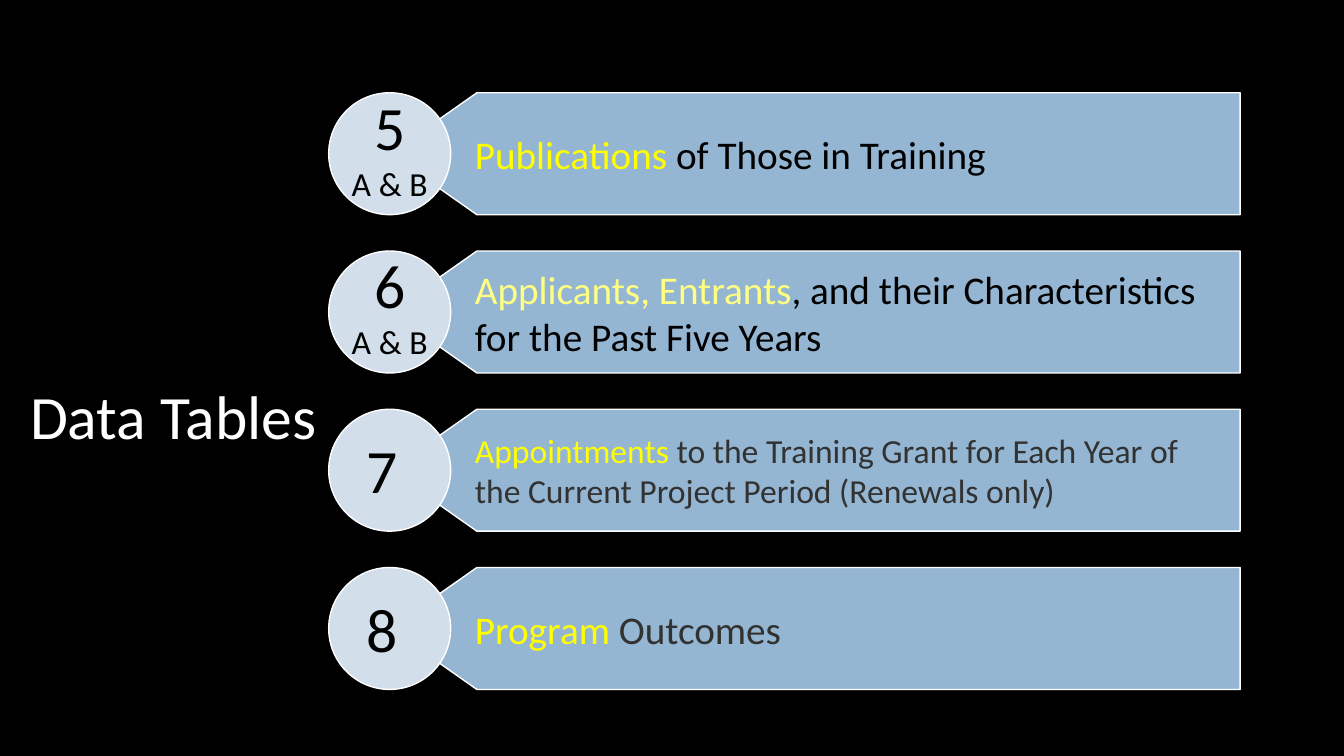
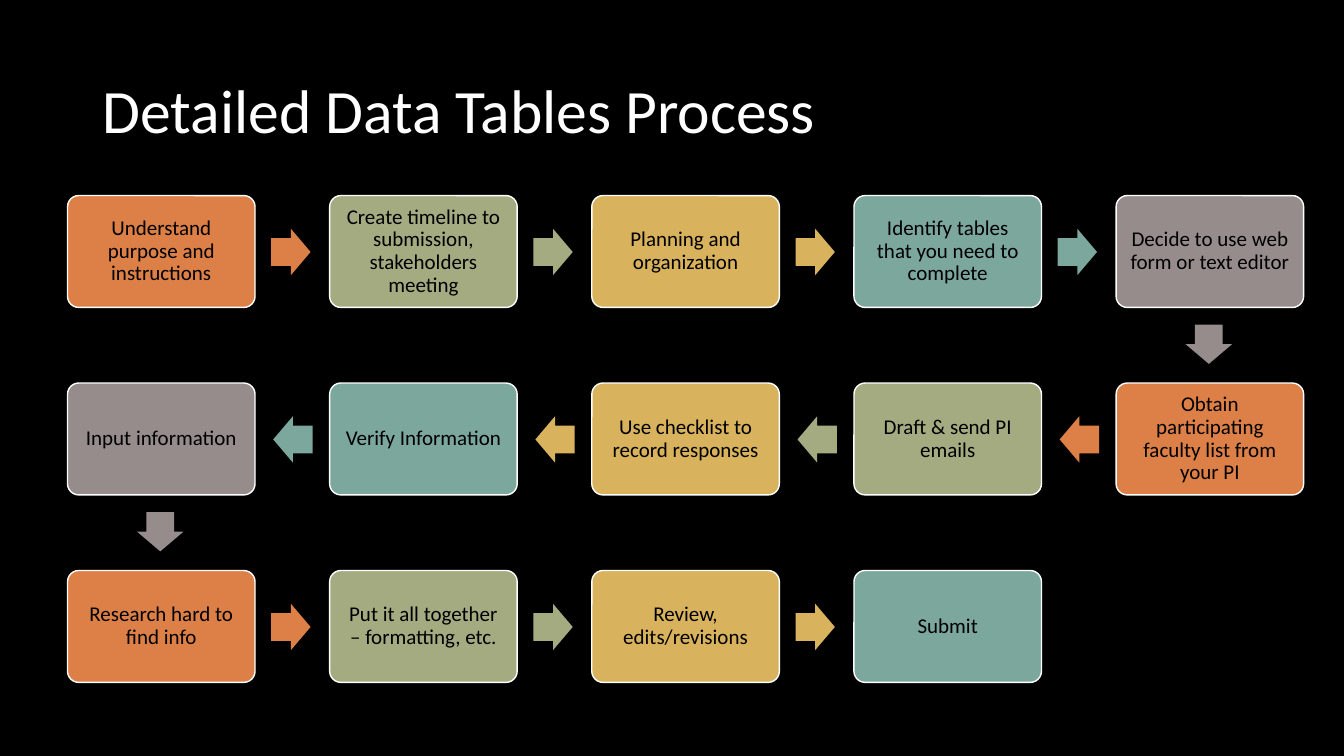
from pptx import Presentation
from pptx.dml.color import RGBColor
from pptx.enum.shapes import MSO_SHAPE as Shape
from pptx.enum.text import MSO_ANCHOR as Anchor, PP_ALIGN as Align
from pptx.util import Inches, Pt

# Shared look
FONT = "Calibri"
BLACK = RGBColor(0x00, 0x00, 0x00)
WHITE = RGBColor(0xFF, 0xFF, 0xFF)
GREY = RGBColor(0x31, 0x32, 0x31)
YELLOW = RGBColor(0xFF, 0xFF, 0x00)
PALE = RGBColor(0xFF, 0xFF, 0x82)
BLUE = RGBColor(0x94, 0xB6, 0xD2)
MIST = RGBColor(0xD2, 0xDE, 0xEA)
ORANGE = RGBColor(0xDD, 0x80, 0x47)
GREEN = RGBColor(0xA5, 0xAB, 0x81)
GOLD = RGBColor(0xD8, 0xB2, 0x5C)
TEAL = RGBColor(0x7B, 0xA7, 0x9D)
TAUPE = RGBColor(0x96, 0x8C, 0x8C)
STEP_FILLS = [ORANGE, GREEN, GOLD, TEAL, TAUPE]

# Tables: number, letters, key words, key colour, other words, colour, size
TABLES = [
    ("5", "A & B", "Publications ", YELLOW,
     "of Those in Training", BLACK, 28),
    ("6", "A & B", "Applicants, Entrants", PALE,
     ", and their Characteristics for the Past Five Years", BLACK, 28),
    ("7", "", "Appointments ", YELLOW,
     "to the Training Grant for Each Year of the Current Project Period "
     "(Renewals only)", GREY, 24),
    ("8", "", "Program ", YELLOW, "Outcomes", GREY, 28),
]
BAND_TOP, BAND_STEP, BAND_HIGH = 0.92, 1.57, 1.21
BAND_LEFT, BAND_NECK, BAND_RIGHT = 3.87, 4.73, 12.3

# Steps run in a snake: left to right, then right to left
STEPS = [
    "Understand purpose and instructions",
    "Create timeline to submission, stakeholders meeting",
    "Planning and organization",
    "Identify tables that you need to complete",
    "Decide to use web form or text editor",
    "Obtain participating faculty list from your PI",
    "Draft & send PI emails",
    "Use checklist to record responses",
    "Verify Information",
    "Input information",
    "Research hard to find info",
    "Put it all together – formatting, etc.",
    "Review, edits/revisions",
    "Submit",
]
COLS = 5
STEP_WIDE, STEP_HIGH = 1.86, 1.11


def set_frame(shape, pad=(0.1, 0.05, 0.1, 0.05), anchor=Anchor.MIDDLE):
    frame = shape.text_frame
    left, top, right, bottom = map(Inches, pad)
    values = {"word_wrap": True, "vertical_anchor": anchor,
              "margin_left": left, "margin_top": top,
              "margin_right": right, "margin_bottom": bottom}
    for name, value in values.items():
        setattr(frame, name, value)
    return frame


def add_para(frame, runs, align=Align.LEFT, spacing=1.0):
    """Write runs of (text, size, colour) as one paragraph."""
    para = frame.paragraphs[0]
    if para.runs:
        para = frame.add_paragraph()
    para.alignment, para.line_spacing = align, spacing
    for text, size, color in runs:
        run = para.add_run()
        run.text = text
        for name, value in {"name": FONT, "size": Pt(size)}.items():
            setattr(run.font, name, value)
        run.font.color.rgb = color


def paint(shape, fill, edged=True):
    shape.shadow.inherit = False
    shape.fill.solid()
    shape.fill.fore_color.rgb = fill
    if edged:
        shape.line.color.rgb = WHITE
        shape.line.width = Pt(1)
    else:
        shape.line.fill.background()


def add_form(slide, kind, box, fill, edged=True, adjust=()):
    shape = slide.shapes.add_shape(kind, *map(Inches, box))
    for i, value in enumerate(adjust):
        shape.adjustments[i] = value
    paint(shape, fill, edged)
    return shape


def add_title(slide, text, box):
    frame = set_frame(slide.shapes.add_textbox(*map(Inches, box)))
    add_para(frame, [(text, 44, WHITE)], spacing=0.9)


def add_band(slide, top, runs):
    """Draw a bar whose left end narrows to a point."""
    mid, low = top + BAND_HIGH / 2, top + BAND_HIGH
    points = [(BAND_NECK, low), (BAND_LEFT, mid), (BAND_NECK, top),
              (BAND_RIGHT, top)]
    pen = slide.shapes.build_freeform(Inches(BAND_RIGHT), Inches(low))
    pen.add_line_segments([(Inches(x), Inches(y)) for x, y in points])
    band = pen.convert_to_shape()
    paint(band, BLUE)
    add_para(set_frame(band, (0.84, 0.08, 0.16, 0.08)), runs)


def add_badge(slide, top, number, letters):
    add_form(slide, Shape.OVAL, (3.26, top, BAND_HIGH, BAND_HIGH), MIST)
    if letters:
        box, align = (3.33, top - 0.09, 1.07, 1.25), Align.CENTER
    else:
        box, align = (3.54, top + 0.18, 0.66, 0.84), Align.LEFT
    label = slide.shapes.add_textbox(*map(Inches, box))
    frame = set_frame(label, anchor=Anchor.TOP)
    add_para(frame, [(number, 44, BLACK)], align)
    if letters:
        add_para(frame, [(letters, 24, BLACK)], align)


def add_step(slide, left, top, text, fill):
    box = (left, top, STEP_WIDE, STEP_HIGH)
    step = add_form(slide, Shape.ROUNDED_RECTANGLE, box, fill, adjust=[0.1])
    frame = set_frame(step, (0.1, 0.1, 0.1, 0.1))
    add_para(frame, [(text, 15, BLACK)], Align.CENTER, 0.9)


def add_arrow(slide, left, top, turn, back, fill):
    """Point from the step at left, top to the one after it."""
    if turn:
        kind, box = Shape.DOWN_ARROW, (left + 0.69, top + 1.28, 0.46, 0.39)
    elif back:
        kind, box = Shape.LEFT_ARROW, (left - 0.56, top + 0.33, 0.39, 0.46)
    else:
        kind, box = Shape.RIGHT_ARROW, (left + 2.02, top + 0.33, 0.39, 0.46)
    add_form(slide, kind, box, fill, False, [0.6, 0.5])


def make_tables(slide):
    add_title(slide, "Data Tables", (0.2, 3.61, 3.48, 1.1))
    for i, (number, letters, key, tint, rest, color, size) in enumerate(TABLES):
        top = BAND_TOP + i * BAND_STEP
        add_band(slide, top, [(key, size, tint), (rest, size, color)])
        add_badge(slide, top, number, letters)


def make_flow(slide):
    add_title(slide, "Detailed Data Tables Process", (0.92, 0.4, 11.5, 1.45))
    for i, text in enumerate(STEPS):
        row, col = divmod(i, COLS)
        back = row % 2 == 1
        place = COLS - 1 - col if back else col
        left, top = 0.67 + 2.6 * place, 1.94 + 1.86 * row
        fill = STEP_FILLS[col]
        add_step(slide, left, top, text, fill)
        if i < len(STEPS) - 1:
            add_arrow(slide, left, top, col == COLS - 1, back, fill)


def main():
    deck = Presentation()
    deck.slide_width, deck.slide_height = Inches(13.33), Inches(7.5)
    ground = deck.slide_master.background.fill
    ground.solid()
    ground.fore_color.rgb = BLACK
    for make in (make_tables, make_flow):
        make(deck.slides.add_slide(deck.slide_layouts[6]))
    deck.save("out.pptx")


if __name__ == "__main__":
    main()
